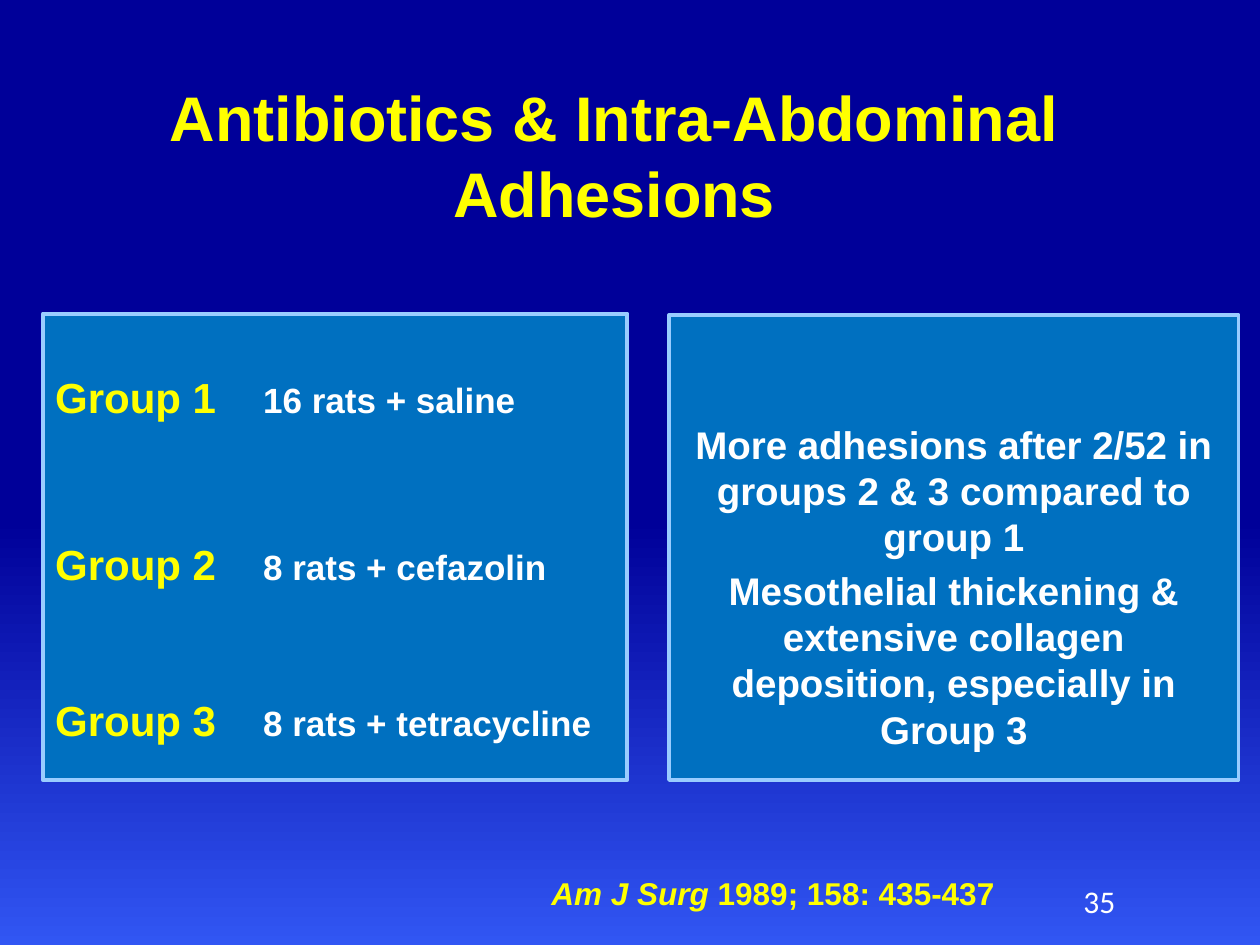
from copy import deepcopy

from pptx import Presentation
from pptx.dml.color import RGBColor
from pptx.enum.shapes import MSO_SHAPE
from pptx.enum.text import MSO_ANCHOR, PP_ALIGN
from pptx.oxml import parse_xml
from pptx.oxml.ns import nsdecls
from pptx.util import Inches, Pt

# Grid of 100 columns by 75 rows
COLS, ROWS = 100, 75
WIDTH, HEIGHT = Inches(10), Inches(7.5)
COL, ROW = WIDTH / COLS, HEIGHT / ROWS
YELLOW, WHITE = "FFFF00", "FFFFFF"
PANEL, BORDER = "0070C0", "99CCFF"
LEADING = 1.2  # line pitch as a multiple of the text size

GROUPS = [
    ("Group 1", "16 rats + saline", 0),
    ("Group 2", "8 rats + cefazolin", 66.6),
    ("Group 3", "8 rats + tetracycline", 60.3),
]
FINDINGS = [
    "More adhesions after 2/52 in groups 2 & 3 compared to group 1",
    "Mesothelial thickening & extensive collagen deposition, especially in Group 3",
]


def rgb(value):
    return RGBColor.from_string(value)


def place(box):
    x, y, w, h = box
    return round(x * COL), round(y * ROW), round(w * COL), round(h * ROW)


def add_run(p, text, size, color, bold=True, italic=False, font="Arial"):
    r = p.add_run()
    r.text = text
    r.font.name, r.font.size = font, Pt(size)
    r.font.bold, r.font.italic = bold, italic
    r.font.color.rgb = rgb(color)


def add_text_box(s, box, align, anchor=MSO_ANCHOR.TOP):
    tf = s.shapes.add_textbox(*place(box)).text_frame
    tf.word_wrap = True
    tf.vertical_anchor = anchor
    p = tf.paragraphs[0]
    p.alignment = align
    return p


def add_panel(s, box, top_rows):
    sp = s.shapes.add_shape(MSO_SHAPE.RECTANGLE, *place(box))
    sp.shadow.inherit = False
    sp.fill.solid()
    sp.fill.fore_color.rgb = rgb(PANEL)
    sp.line.color.rgb = rgb(BORDER)
    sp.line.width = Pt(2.25)
    tf = sp.text_frame
    tf.word_wrap = True
    tf.vertical_anchor = MSO_ANCHOR.TOP
    tf.margin_top = round(top_rows * ROW)
    return tf


def add_paragraph(tf, index, align, size, before):
    p = tf.add_paragraph() if index else tf.paragraphs[0]
    p.alignment = align
    p.line_spacing = Pt(size * LEADING)
    if index:
        p.space_before = Pt(before)
    return p


def paint_background(s):
    fill = s.background.fill
    fill.gradient()
    fill.gradient_angle = 270
    stops = fill.gradient_stops
    first = stops[0]._gs
    first.addnext(deepcopy(first))
    colors = [(0, "000099"), (0.55, "000099"), (1, "3156F3")]
    for stop, (position, color) in zip(fill.gradient_stops, colors):
        stop.position = position
        stop.color.rgb = rgb(color)


def add_title(s, box):
    p = add_text_box(s, box, PP_ALIGN.CENTER, MSO_ANCHOR.MIDDLE)
    p.line_spacing = Pt(36 * LEADING)
    add_run(p, "Antibiotics & Intra-Abdominal Adhesions", 36, YELLOW)


def add_groups(s, box):
    tf = add_panel(s, box, 4.6)
    for i, (name, treatment, before) in enumerate(GROUPS):
        p = add_paragraph(tf, i, PP_ALIGN.LEFT, 24, before)
        # Tab stop that lines up the treatments
        p._p.get_or_add_pPr().append(parse_xml(
            f'<a:tabLst {nsdecls("a")}>'
            f'<a:tab pos="{round(16.5 * COL)}" algn="l"/></a:tabLst>'))
        add_run(p, name + "\t", 24, YELLOW)
        add_run(p, treatment, 20, WHITE)


def add_findings(s, box):
    tf = add_panel(s, box, 8.4)
    for i, finding in enumerate(FINDINGS):
        p = add_paragraph(tf, i, PP_ALIGN.CENTER, 22, 4.4)
        add_run(p, finding, 22, WHITE)


def add_footer(s, citation_box, number_box):
    p = add_text_box(s, citation_box, PP_ALIGN.RIGHT)
    add_run(p, "Am J Surg ", 18, YELLOW, italic=True)
    add_run(p, "1989; 158: 435-437", 18, YELLOW)
    p = add_text_box(s, number_box, PP_ALIGN.RIGHT, MSO_ANCHOR.MIDDLE)
    add_run(p, "35", 18, WHITE, bold=False, font="Calibri")


def main():
    prs = Presentation()
    prs.slide_width, prs.slide_height = WIDTH, HEIGHT
    s = prs.slides.add_slide(prs.slide_layouts[6])
    paint_background(s)
    add_title(s, (1.2, 6, 95.1, 12.5))
    add_groups(s, (3.4, 24.9, 46.4, 37))
    add_findings(s, (53.1, 25, 45.2, 36.9))
    add_footer(s, (13, 68.9, 66.9, 4), (81.5, 69.5, 8, 4))
    prs.save("out.pptx")


if __name__ == "__main__":
    main()
